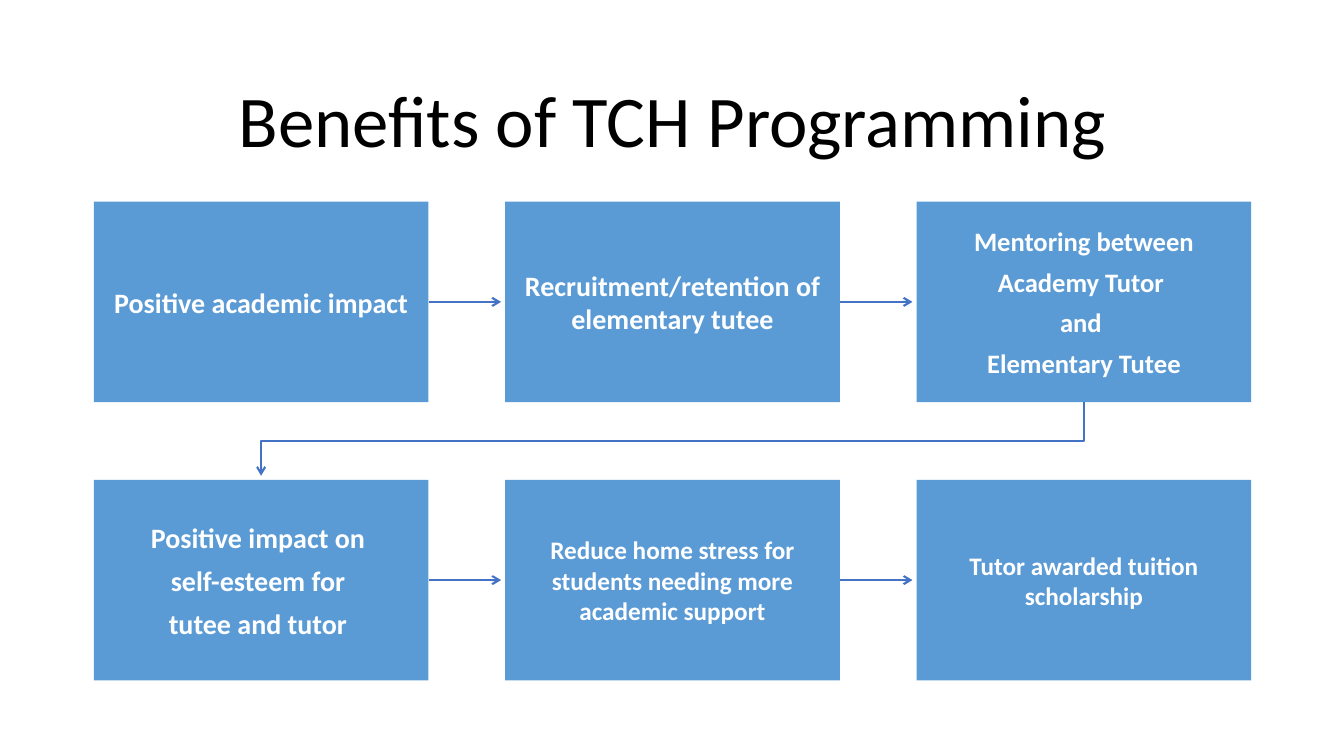
from pptx import Presentation
from pptx.dml.color import RGBColor
from pptx.enum.shapes import MSO_CONNECTOR, MSO_SHAPE
from pptx.enum.text import MSO_ANCHOR, PP_ALIGN
from pptx.oxml.ns import qn
from pptx.util import Inches, Pt
from lxml import etree

TITLE = "Benefits of TCH Programming"
STEPS = [
    (20, ["Positive academic impact"]),
    (20, ["Recruitment/retention of elementary tutee"]),
    (19, ["Mentoring between", "Academy Tutor ", "and ", "Elementary Tutee"]),
    (20, ["Positive impact on ", "self-esteem for ", "tutee and tutor "]),
    (18, ["Reduce home stress for students needing more academic support"]),
    (18, ["Tutor awarded tuition scholarship"]),
]

BLACK = RGBColor(0x00, 0x00, 0x00)
WHITE = RGBColor(0xFF, 0xFF, 0xFF)
BOX_BLUE = RGBColor(0x5B, 0x9B, 0xD5)
ARROW_BLUE = RGBColor(0x44, 0x72, 0xC4)
CENTER, MIDDLE = PP_ALIGN.CENTER, MSO_ANCHOR.MIDDLE
RECTANGLE, STRAIGHT = MSO_SHAPE.RECTANGLE, MSO_CONNECTOR.STRAIGHT

COLUMNS = 3
LEFT, TOP = 0.93, 2
BOX_WIDTH, BOX_HEIGHT = 3.32, 1.99
COLUMN_STEP, ROW_STEP = 4.08, 2.76
ARROW_GAP = 0.04
RIGHT_SIDE = 3
SPACE_AFTER = 0.33
TITLE_PLACE = {"left": 0.92, "top": 0.61, "width": 11.5, "height": 1.24}
BOX_FRAME = {
    "margin_left": Inches(0.16), "margin_right": Inches(0.16),
    "margin_top": Inches(0.17), "margin_bottom": Inches(0.17),
    "vertical_anchor": MIDDLE, "word_wrap": True,
}


def apply(target, values):
    for name, value in values.items():
        setattr(target, name, value)


def format_paragraph(paragraph, text, size, color, bold, layout):
    paragraph.text = text
    apply(paragraph, {"alignment": CENTER, **layout})
    apply(paragraph.font, {"name": "Calibri", "size": Pt(size), "bold": bold})
    paragraph.font.color.rgb = color


def box_position(index):
    row, column = divmod(index, COLUMNS)
    return LEFT + column * COLUMN_STEP, TOP + row * ROW_STEP


def add_title(slide):
    title = slide.shapes.title
    apply(title, {name: Inches(value) for name, value in TITLE_PLACE.items()})
    apply(title.text_frame, {"vertical_anchor": MIDDLE, "word_wrap": True})
    format_paragraph(title.text_frame.paragraphs[0], TITLE, 52, BLACK, False,
                     {"line_spacing": 0.9})


def add_box(slide, index, size, lines):
    left, top = box_position(index)
    box = slide.shapes.add_shape(RECTANGLE, Inches(left), Inches(top),
                                 Inches(BOX_WIDTH), Inches(BOX_HEIGHT))
    box.shadow.inherit = False
    box.fill.solid()
    box.fill.fore_color.rgb = BOX_BLUE
    box.line.fill.background()
    frame = box.text_frame
    apply(frame, BOX_FRAME)
    for number, line in enumerate(lines):
        paragraph = frame.add_paragraph() if number else frame.paragraphs[0]
        format_paragraph(paragraph, line, size, WHITE, True,
                         {"space_after": Pt(size * SPACE_AFTER)})
    return box


def style_arrow(shape):
    shape.line.color.rgb = ARROW_BLUE
    shape.line.width = Pt(1.5)
    properties = shape.element.spPr
    outline = properties.find(qn("a:ln"))
    etree.SubElement(outline, qn("a:tailEnd"), type="arrow")
    if properties.find(qn("a:effectLst")) is None:
        etree.SubElement(properties, qn("a:effectLst"))


def add_row_arrow(slide, box, index):
    left, top = box_position(index)
    middle = Inches(top + BOX_HEIGHT / 2)
    arrow = slide.shapes.add_connector(
        STRAIGHT, Inches(left + BOX_WIDTH), middle,
        Inches(left + COLUMN_STEP - ARROW_GAP), middle)
    arrow.begin_connect(box, RIGHT_SIDE)
    style_arrow(arrow)


def add_turn_arrow(slide, index):
    start_left, start_top = box_position(index)
    end_left, end_top = box_position(index + 1)
    start_x, end_x = start_left + BOX_WIDTH / 2, end_left + BOX_WIDTH / 2
    start_y = start_top + BOX_HEIGHT
    turn_y = (start_y + end_top) / 2
    corners = [(start_x, turn_y), (end_x, turn_y), (end_x, end_top - ARROW_GAP)]
    builder = slide.shapes.build_freeform(Inches(start_x), Inches(start_y))
    builder.add_line_segments([(Inches(x), Inches(y)) for x, y in corners],
                              close=False)
    arrow = builder.convert_to_shape()
    arrow.fill.background()
    style_arrow(arrow)


def main():
    """Build the slide with six benefits joined by arrows."""
    presentation = Presentation()
    presentation.slide_width = Inches(13.33)
    presentation.slide_height = Inches(7.5)
    slide = presentation.slides.add_slide(presentation.slide_layouts[5])
    add_title(slide)
    boxes = [add_box(slide, index, *step) for index, step in enumerate(STEPS)]
    for index, box in enumerate(boxes[:-1]):
        if (index + 1) % COLUMNS:
            add_row_arrow(slide, box, index)
        else:
            add_turn_arrow(slide, index)
    presentation.save("out.pptx")


if __name__ == "__main__":
    main()
